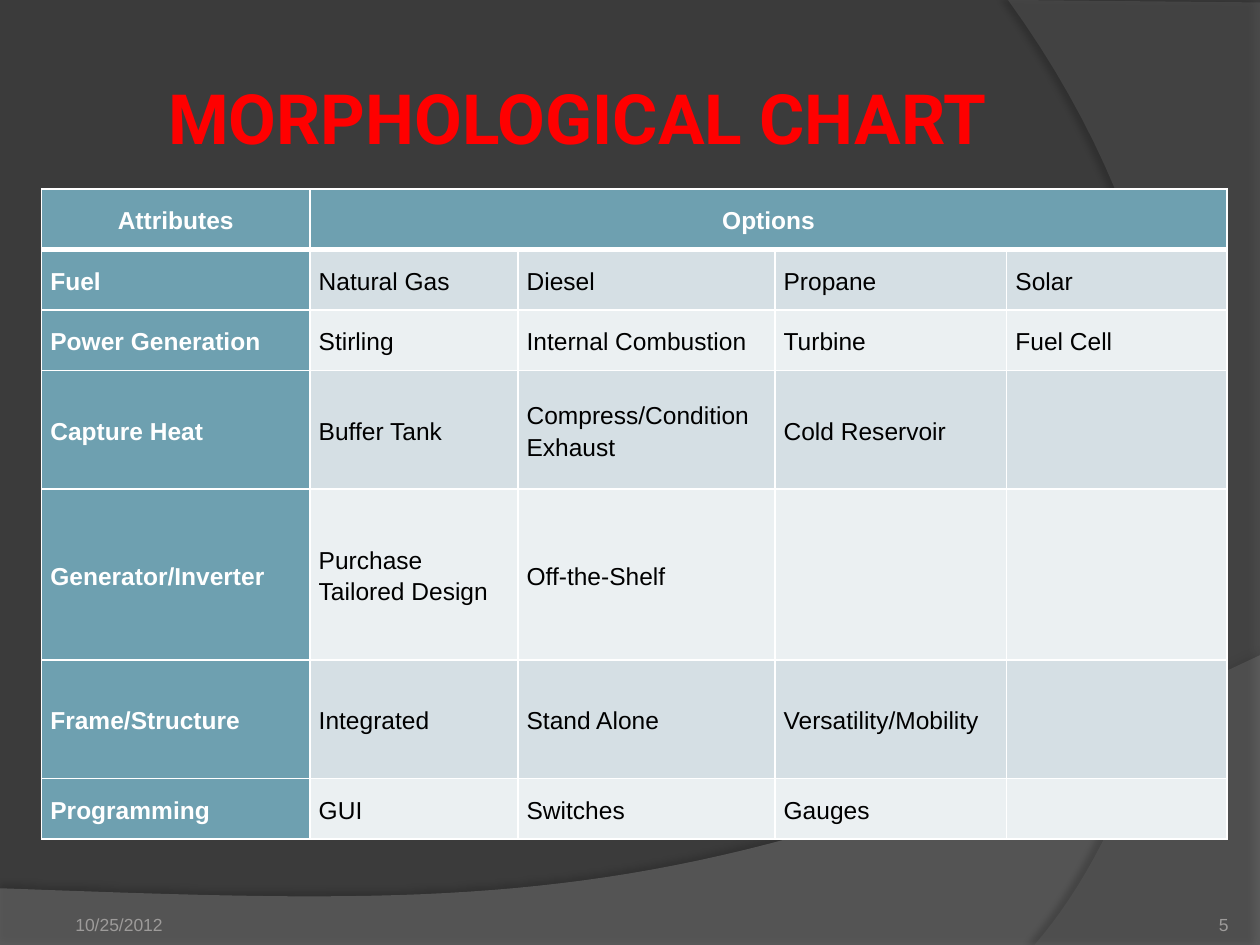
import dataclasses
import typing

import pptx
import pptx.dml.color
import pptx.enum.text
import pptx.oxml
import pptx.oxml.ns
import pptx.util

Align = pptx.enum.text.PP_ALIGN
Anchor = pptx.enum.text.MSO_ANCHOR
Point = tuple[float, float]

HUES = {
    "back": "3B3B3B", "wave": "7F7F7F", "arc": "5E5E5E", "title": "FF0000",
    "head": "6EA0B0", "odd": "D5DFE4", "even": "EBF0F2",
    "white": "FFFFFF", "black": "000000", "note": "9D9B9A",
}

# The slide is a grid of 100 columns and 75 rows
COLS, ROWS = 100, 75
deck = pptx.Presentation()
deck.slide_width = pptx.util.Inches(10)
deck.slide_height = pptx.util.Inches(7.5)


def wide(cols: float) -> int:
    return round(deck.slide_width * cols / COLS)


def tall(rows: float) -> int:
    return round(deck.slide_height * rows / ROWS)


@dataclasses.dataclass
class Box:
    left: float
    top: float
    width: float
    height: float

    def place(self) -> tuple[int, int, int, int]:
        return wide(self.left), tall(self.top), wide(self.width), tall(self.height)


@dataclasses.dataclass
class Band:
    hue: str
    alpha: int
    lines: list[Point]
    curve: list[Point]
    shade: int
    gap: float
    angle: int


@dataclasses.dataclass
class Note:
    text: str
    box: Box
    inset: tuple[float, float, float, float]
    align: typing.Any


BANDS = [
    Band("wave", 45, [(0, 70.5), (0, 75.1), (100, 75.1), (100, 52)],
         [(55.9, 72.9), (39.1, 71.9), (0, 70.5)], 35, 3.5, 270),
    Band("arc", 40, [(100, 0.2), (100, 75), (82.1, 75)],
         [(93.5, 61.9), (101.8, 30), (80, 0)], 45, 4, 180),
]
NOTES = [
    Note("10/25/2012", Box(5, 70.2, 23.3, 4), (1, 0.5, 1, 0), Align.LEFT),
    Note("5", Box(89.2, 70.2, 8.3, 4), (0, 0, 0, 0), Align.RIGHT),
]
CHART = [
    ["Attributes", "Options"],
    ["Fuel", "Natural Gas", "Diesel", "Propane", "Solar"],
    ["Power Generation", "Stirling", "Internal Combustion", "Turbine", "Fuel Cell"],
    ["Capture Heat", "Buffer Tank", "Compress/Condition Exhaust", "Cold Reservoir"],
    ["Generator/Inverter", "Purchase Tailored Design", "Off-the-Shelf"],
    ["Frame/Structure", "Integrated", "Stand Alone", "Versatility/Mobility"],
    ["Programming", "GUI", "Switches", "Gauges"],
]
WIDTHS = [21.3, 16.5, 20.4, 18.4, 17.5]
HEIGHTS = [4.8, 4.8, 4.8, 9.4, 13.6, 9.4, 4.8]


def color(name: str) -> pptx.dml.color.RGBColor:
    return pptx.dml.color.RGBColor.from_string(HUES[name])


def parse(tag: str, body: str, attrs: str = "") -> typing.Any:
    space = pptx.oxml.ns.nsdecls("a")
    return pptx.oxml.parse_xml(f"<a:{tag} {space} {attrs}>{body}</a:{tag}>")


def style(para: typing.Any, font: str, size: float, hue: str, bold: bool = False) -> None:
    for run in para.runs:
        run.font.name = font
        run.font.size = pptx.util.Pt(size)
        run.font.bold = bold
        run.font.color.rgb = color(hue)


def inset(frame: typing.Any, sides: tuple[float, float, float, float]) -> None:
    frame.margin_left, frame.margin_right = wide(sides[0]), wide(sides[2])
    frame.margin_top, frame.margin_bottom = tall(sides[1]), tall(sides[3])


def bezier(ends: list[Point], steps: int = 48) -> list[Point]:
    """Points along a cubic curve, without its start."""
    spots = []
    for step in range(1, steps + 1):
        t = step / steps
        parts = [(1 - t) ** 3, 3 * t * (1 - t) ** 2, 3 * t * t * (1 - t), t ** 3]
        spots.append(tuple(sum(p * e[i] for p, e in zip(parts, ends)) for i in (0, 1)))
    return spots


def draw_band(slide: typing.Any, band: Band) -> None:
    spots = band.lines + bezier([band.lines[-1], *band.curve])
    spots = [(wide(x), tall(y)) for x, y in spots]
    pen = slide.shapes.build_freeform(*spots[0])
    pen.add_line_segments(spots[1:], close=True)
    shape = pen.convert_to_shape()
    shape.fill.solid()
    shape.fill.fore_color.rgb = color(band.hue)
    shape.line.fill.background()
    fill = next(shape.element.iter(pptx.oxml.ns.qn("a:srgbClr")))
    fill.append(parse("alpha", "", f'val="{band.alpha * 1000}"'))
    # Soft shadow along the curved edge
    blur, gap = pptx.util.Pt(4), pptx.util.Pt(band.gap)
    shape.element.spPr.append(parse("effectLst", (
        f'<a:outerShdw blurRad="{blur}" dist="{gap}" dir="{band.angle * 60000}" '
        f'algn="ctr" rotWithShape="0"><a:srgbClr val="{HUES["black"]}">'
        f'<a:alpha val="{band.shade * 1000}"/></a:srgbClr></a:outerShdw>')))


def draw_title(slide: typing.Any, text: str, box: Box) -> None:
    title = slide.shapes.title
    title.left, title.top, title.width, title.height = box.place()
    frame = title.text_frame
    frame.text = text
    frame.word_wrap = True
    frame.auto_size = pptx.enum.text.MSO_AUTO_SIZE.NONE
    frame.vertical_anchor = Anchor.MIDDLE
    inset(frame, (0.5, 0.5, 0.5, 0.5))
    frame.paragraphs[0].alignment = Align.CENTER
    style(frame.paragraphs[0], "Roboto", 39.6, "title", True)


def draw_note(slide: typing.Any, note: Note) -> None:
    frame = slide.shapes.add_textbox(*note.box.place()).text_frame
    frame.text = note.text
    frame.word_wrap = True
    frame.vertical_anchor = Anchor.BOTTOM
    inset(frame, note.inset)
    frame.paragraphs[0].alignment = note.align
    style(frame.paragraphs[0], "Arial", 10, "note")


def fill_cell(cell: typing.Any, text: str, row: int, col: int) -> None:
    head = row == 0 or col == 0
    cell.fill.solid()
    cell.fill.fore_color.rgb = color("head" if head else "odd" if row % 2 else "even")
    cell.vertical_anchor = Anchor.MIDDLE
    inset(cell, (0.7, 0, 0.7, 0))
    if text:
        cell.text_frame.text = text
        para = cell.text_frame.paragraphs[0]
        para.line_spacing = 1.15
        para.alignment = Align.CENTER if row == 0 else Align.LEFT
        style(para, "Arial", 14, "white" if head else "black", head)


def rule_cell(props: typing.Any, row: int) -> None:
    thick = {("B", 0): 3, ("T", 1): 3}
    paint = f'<a:solidFill><a:srgbClr val="{HUES["white"]}"/></a:solidFill>'
    for spot, side in enumerate("LRTB"):
        size = pptx.util.Pt(thick.get((side, row), 1))
        props.insert(spot, parse(f"ln{side}", paint, f'w="{size}"'))


def draw_chart(slide: typing.Any, box: Box) -> None:
    shape = slide.shapes.add_table(len(HEIGHTS), len(WIDTHS), *box.place())
    table = shape.table
    table.first_row = table.horz_banding = False
    for col, width in zip(table.columns, WIDTHS):
        col.width = wide(width)
    for row, height in zip(table.rows, HEIGHTS):
        row.height = tall(height)
    for row, words in enumerate(CHART):
        words = words + [""] * (len(WIDTHS) - len(words))
        for col, text in enumerate(words):
            fill_cell(table.cell(row, col), text, row, col)
    table.cell(0, 1).merge(table.cell(0, len(WIDTHS) - 1))
    for spot, props in enumerate(shape.element.iter(pptx.oxml.ns.qn("a:tcPr"))):
        rule_cell(props, spot // len(WIDTHS))


def main() -> None:
    slide = deck.slides.add_slide(deck.slide_layouts[5])
    slide.background.fill.solid()
    slide.background.fill.fore_color.rgb = color("back")

    # Curved backdrop, with the title in front of it
    for band in BANDS:
        draw_band(slide, band)
    title = slide.shapes.title.element
    title.getparent().append(title)
    draw_title(slide, "MORPHOLOGICAL CHART", Box(5, 3, 81.7, 12.5))

    # Options table, date and page number
    draw_chart(slide, Box(3.3, 15, sum(WIDTHS), sum(HEIGHTS)))
    for note in NOTES:
        draw_note(slide, note)
    deck.save("out.pptx")


if __name__ == "__main__":
    main()
